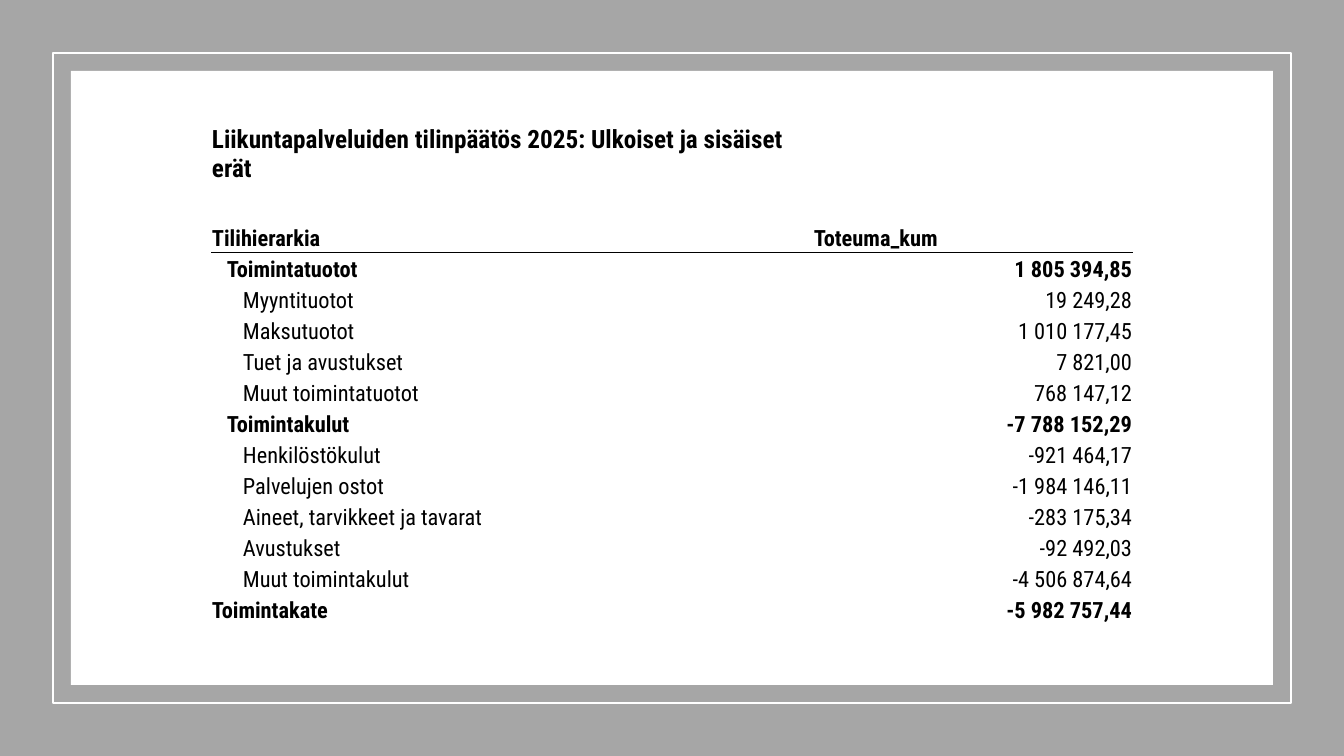
from dataclasses import dataclass

from lxml import etree
from pptx import Presentation
from pptx import util as u
from pptx.dml.color import RGBColor
from pptx.enum import shapes, text
from pptx.oxml import ns

SLIDE_WIDTH, SLIDE_HEIGHT = 1344, 756
EMU_PER_PX = 12192000 / SLIDE_WIDTH

GREY = RGBColor(0xA6, 0xA6, 0xA6)
WHITE = RGBColor(0xFF, 0xFF, 0xFF)
BLACK = RGBColor(0x00, 0x00, 0x00)
FONT = "Roboto Condensed"
NO_STYLE_NO_GRID = "{2D5ABB26-0587-4C30-8999-92F81FD0307C}"

TABLE_LEFT, TABLE_TOP = 211, 124
COLUMN_WIDTHS = (602, 320)
TITLE_HEIGHT, GAP_HEIGHT, ROW_HEIGHT = 59, 37, 31
LEVEL_INDENTS = (0, 15, 31)


@dataclass(frozen=True)
class Panel:
    inset: int
    fill: RGBColor | None = None
    line: RGBColor | None = None


@dataclass(frozen=True)
class Account:
    name: str
    amount: str
    level: int = 2

    @property
    def bold(self) -> bool:
        return self.level < 2


PANELS = (Panel(0, fill=GREY), Panel(53, line=WHITE), Panel(71, fill=WHITE))
TITLE = "Liikuntapalveluiden tilinpäätös 2025: Ulkoiset ja sisäiset erät"
HEADINGS = ("Tilihierarkia", "Toteuma_kum")
ACCOUNTS = (
    Account("Toimintatuotot", "1 805 394,85", 1),
    Account("Myyntituotot", "19 249,28"),
    Account("Maksutuotot", "1 010 177,45"),
    Account("Tuet ja avustukset", "7 821,00"),
    Account("Muut toimintatuotot", "768 147,12"),
    Account("Toimintakulut", "-7 788 152,29", 1),
    Account("Henkilöstökulut", "-921 464,17"),
    Account("Palvelujen ostot", "-1 984 146,11"),
    Account("Aineet, tarvikkeet ja tavarat", "-283 175,34"),
    Account("Avustukset", "-92 492,03"),
    Account("Muut toimintakulut", "-4 506 874,64"),
    Account("Toimintakate", "-5 982 757,44", 0),
)


def px(length: int) -> u.Emu:
    return u.Emu(round(length * EMU_PER_PX))


def draw_panel(slide, panel: Panel) -> None:
    shape = slide.shapes.add_shape(
        shapes.MSO_SHAPE.RECTANGLE,
        px(panel.inset),
        px(panel.inset),
        px(SLIDE_WIDTH - 2 * panel.inset),
        px(SLIDE_HEIGHT - 2 * panel.inset),
    )
    shape.shadow.inherit = False
    if panel.fill is None:
        shape.fill.background()
    else:
        shape.fill.solid()
        shape.fill.fore_color.rgb = panel.fill
    if panel.line is None:
        shape.line.fill.background()
    else:
        shape.line.color.rgb = panel.line
        shape.line.width = u.Pt(1.5)


def add_bottom_border(cell) -> None:
    border = etree.Element(ns.qn("a:lnB"), w=str(u.Pt(0.5)))
    fill = etree.SubElement(border, ns.qn("a:solidFill"))
    etree.SubElement(fill, ns.qn("a:srgbClr"), val=str(BLACK))
    cell._tc.get_or_add_tcPr().insert(0, border)


def write_cell(cell, content: str, size: int = 16, bold: bool = True,
               align: text.PP_ALIGN = text.PP_ALIGN.LEFT, indent: int = 0) -> None:
    cell.text = content
    paragraph = cell.text_frame.paragraphs[0]
    paragraph.alignment = align
    if indent:
        paragraph._p.get_or_add_pPr().set("marL", str(px(indent)))
    font = paragraph.runs[0].font
    font.name, font.size, font.bold = FONT, u.Pt(size), bold
    font.color.rgb = BLACK


def draw_accounts(slide) -> None:
    heights = (TITLE_HEIGHT, GAP_HEIGHT, *[ROW_HEIGHT] * (len(ACCOUNTS) + 1), GAP_HEIGHT)
    frame = slide.shapes.add_table(
        len(heights), len(COLUMN_WIDTHS), px(TABLE_LEFT), px(TABLE_TOP),
        px(sum(COLUMN_WIDTHS)), px(sum(heights)),
    )
    table = frame.table
    table.first_row = table.horz_banding = False
    table._tbl.tblPr.find(ns.qn("a:tableStyleId")).text = NO_STYLE_NO_GRID
    for column, width in zip(table.columns, COLUMN_WIDTHS):
        column.width = px(width)
    for row, height in zip(table.rows, heights):
        row.height = px(height)
    for cell in table.iter_cells():
        cell.fill.background()
        cell.vertical_anchor = text.MSO_ANCHOR.BOTTOM
        cell.margin_left = cell.margin_right = cell.margin_top = px(1)
        cell.margin_bottom = px(0)

    write_cell(table.cell(0, 0), TITLE, size=18)
    for column, heading in enumerate(HEADINGS):
        write_cell(table.cell(2, column), heading)
        add_bottom_border(table.cell(2, column))
    for row, account in enumerate(ACCOUNTS, start=3):
        write_cell(table.cell(row, 0), account.name, bold=account.bold,
                   indent=LEVEL_INDENTS[account.level])
        write_cell(table.cell(row, 1), account.amount, bold=account.bold,
                   align=text.PP_ALIGN.RIGHT)


def main() -> None:
    presentation = Presentation()
    presentation.slide_width = px(SLIDE_WIDTH)
    presentation.slide_height = px(SLIDE_HEIGHT)
    slide = presentation.slides.add_slide(presentation.slide_layouts[6])
    for panel in PANELS:
        draw_panel(slide, panel)
    draw_accounts(slide)
    presentation.save("out.pptx")


if __name__ == "__main__":
    main()
